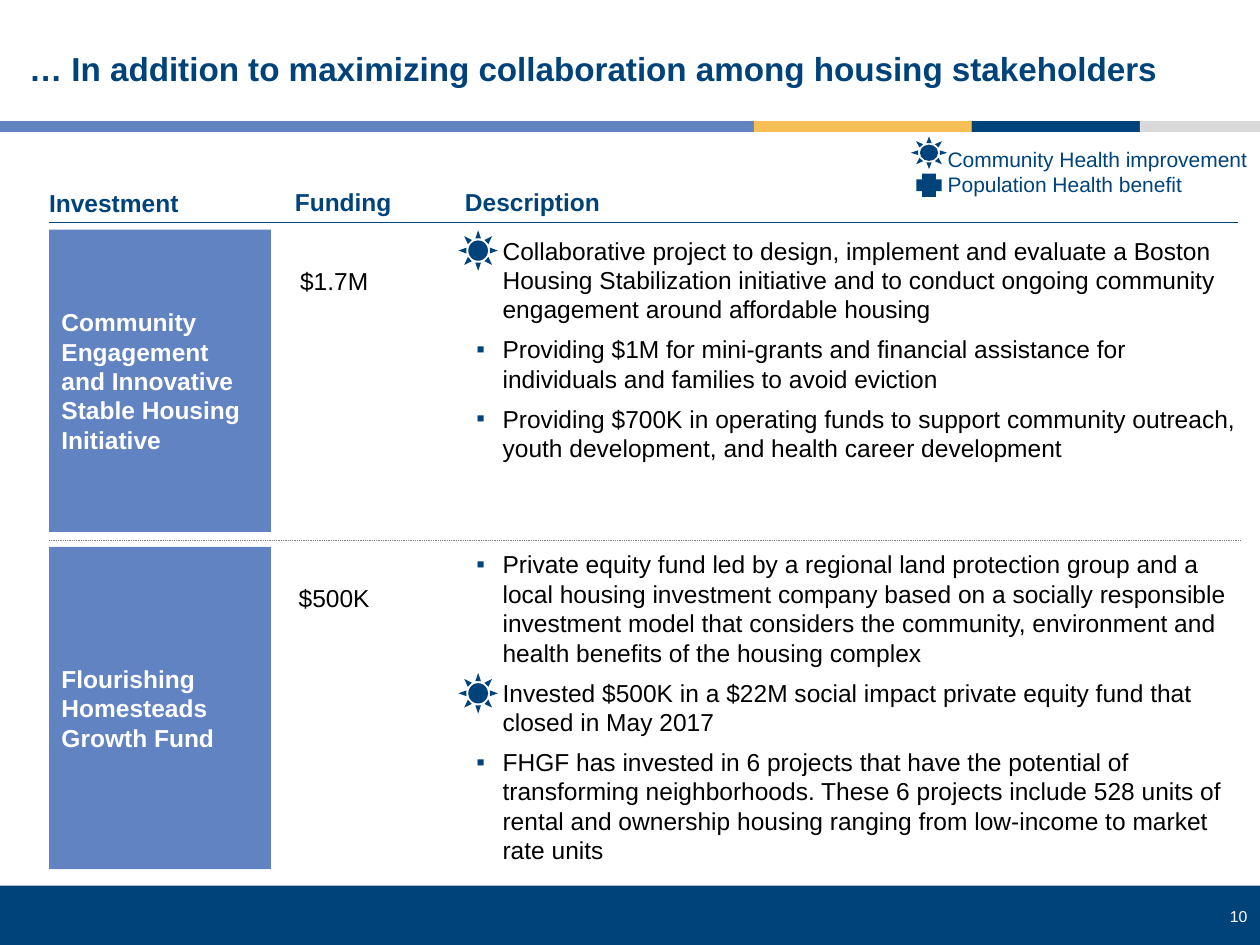
from lxml import etree
from pptx import Presentation
from pptx.dml.color import RGBColor
from pptx.enum.dml import MSO_LINE
from pptx.enum.shapes import MSO_CONNECTOR, MSO_SHAPE
from pptx.enum.text import MSO_ANCHOR, MSO_AUTO_SIZE, PP_ALIGN
from pptx.oxml.ns import qn
from pptx.util import Pt

RECT, SUN, PLUS = MSO_SHAPE.RECTANGLE, MSO_SHAPE.SUN, MSO_SHAPE.CROSS
STRAIGHT, DOTTED = MSO_CONNECTOR.STRAIGHT, MSO_LINE.ROUND_DOT
LEFT, CENTER, RIGHT = PP_ALIGN.LEFT, PP_ALIGN.CENTER, PP_ALIGN.RIGHT
TOP, MIDDLE = MSO_ANCHOR.TOP, MSO_ANCHOR.MIDDLE
FIXED = MSO_AUTO_SIZE.NONE
NAVY, BLUE, GOLD, SILVER = "00437B", "6283C2", "F8BF56", "D9D9D9"
GRAY, BLACK, WHITE = "808080", "000000", "FFFFFF"


def color(value):
    return RGBColor.from_string(value)


def write(holder, lines, size, ink, bold=False, align=LEFT, anchor=TOP, inset=(0, 0)):
    frame = holder.text_frame
    frame.word_wrap, frame.auto_size, frame.vertical_anchor = True, FIXED, anchor
    frame.margin_left = frame.margin_right = Pt(inset[0])
    frame.margin_top = frame.margin_bottom = Pt(inset[1])
    for index, line in enumerate(lines):
        paragraph = frame.add_paragraph() if index else frame.paragraphs[0]
        paragraph.alignment = align
        paragraph.space_before = Pt(0)
        run = paragraph.add_run()
        run.text = line
        run.font.name, run.font.size, run.font.bold = "Arial", Pt(size), bold
        run.font.color.rgb = color(ink)
    return frame.paragraphs


deck = Presentation()
deck.slide_width, deck.slide_height = Pt(720), Pt(540)
slide = deck.slides.add_slide(deck.slide_layouts[3])
shapes = slide.shapes
title, *descriptions = slide.placeholders

bands = [
    (RECT, 0, 506, 720, 34, NAVY),
    (RECT, 0, 69.2, 430.8, 6.2, BLUE),
    (RECT, 430.8, 69.2, 124.4, 6.2, GOLD),
    (RECT, 555.2, 69.2, 96.2, 6.2, NAVY),
    (RECT, 651.4, 69.2, 68.6, 6.2, SILVER),
]
icons = [
    (SUN, 262, 131.6, 22.5, 23.2, NAVY),
    (SUN, 262, 384.6, 22.5, 23.2, NAVY),
    (SUN, 520.5, 78, 20.8, 18.6, NAVY),
    (PLUS, 523.7, 99.3, 14.4, 13.2, NAVY),
]
investments = [
    (RECT, 28, 131.2, 126.8, 172.8, BLUE),
    (RECT, 28, 312.5, 126.8, 184.2, BLUE),
]
names = [
    "Community Engagement and Innovative Stable Housing Initiative",
    "Flourishing Homesteads Growth Fund",
]
blocks = []
for kind, left, top, width, height, fill in bands + icons + investments:
    block = shapes.add_shape(kind, Pt(left), Pt(top), Pt(width), Pt(height))
    block.shadow.inherit = False
    block.fill.solid()
    block.fill.fore_color.rgb = color(fill)
    block.line.fill.background()
    blocks.append(block)
for block, name in zip(blocks[-2:], names):
    write(block, [name], 14, WHITE, True, anchor=MIDDLE, inset=(7.2, 3.6))

title.left, title.top, title.width, title.height = Pt(9.4), Pt(15.8), Pt(697.7), Pt(49.7)
heading = write(
    title, ["… In addition to maximizing collaboration among housing stakeholders"],
    19, NAVY, True, anchor=MIDDLE, inset=(7.2, 3.6),
)
heading[0].line_spacing = 0.9

labels = [
    (28, 107.3, 120, 17.3, ["Investment"], 14, NAVY, True, LEFT),
    (168.5, 106.6, 92, 17.3, ["Funding"], 14, NAVY, True, LEFT),
    (265.7, 106.6, 92, 17.3, ["Description"], 14, NAVY, True, LEFT),
    (145, 151.9, 92, 17.3, ["$1.7M"], 14, BLACK, False, CENTER),
    (145, 333.4, 92, 17.3, ["$500K"], 14, BLACK, False, CENTER),
    (541.5, 83.5, 178.5, 29, ["Community Health improvement", "Population Health benefit"],
     12, NAVY, False, LEFT),
    (663, 518.4, 49.8, 11, ["10"], 9, WHITE, False, RIGHT),
]
for left, top, width, height, lines, size, ink, bold, align in labels:
    label = shapes.add_textbox(Pt(left), Pt(top), Pt(width), Pt(height))
    write(label, lines, size, ink, bold, align)

for top, right, ink, dash in [(127.3, 707.6, NAVY, None), (308.9, 709.2, GRAY, DOTTED)]:
    rule = shapes.add_connector(STRAIGHT, Pt(28), Pt(top), Pt(right), Pt(top))
    rule.line.color.rgb = color(ink)
    rule.line.width = Pt(0.5)
    rule.line.dash_style = dash
    etree.SubElement(rule.element.spPr, qn("a:effectLst"))

details = [
    (134.6, 154, 0, [
        "Collaborative project to design, implement and evaluate a Boston Housing Stabilization "
        "initiative and to conduct ongoing community engagement around affordable housing",
        "Providing $1M for mini-grants and financial assistance for individuals and families "
        "to avoid eviction",
        "Providing $700K in operating funds to support community outreach, youth development, "
        "and health career development",
    ]),
    (313.9, 181.4, 1, [
        "Private equity fund led by a regional land protection group and a local housing "
        "investment company based on a socially responsible investment model that considers "
        "the community, environment and health benefits of the housing complex",
        "Invested $500K in a $22M social impact private equity fund that closed in May 2017",
        "FHGF has invested in 6 projects that have the potential of transforming neighborhoods. "
        "These 6 projects include 528 units of rental and ownership housing ranging from "
        "low-income to market rate units",
    ]),
]
for description, (top, height, sun_row, lines) in zip(descriptions, details):
    description.left, description.top = Pt(272.2), Pt(top)
    description.width, description.height = Pt(435.6), Pt(height)
    for index, paragraph in enumerate(write(description, lines, 14, BLACK)):
        paragraph.space_before = Pt(6 if index else 0)
        properties = paragraph._p.get_or_add_pPr()
        properties.set("marL", str(Pt(15)))
        if index == sun_row:
            properties.set("indent", "0")
            etree.SubElement(properties, qn("a:buNone"))
        else:
            properties.set("indent", str(Pt(-15)))
            bullet_color = etree.SubElement(properties, qn("a:buClr"))
            etree.SubElement(bullet_color, qn("a:srgbClr"), val=NAVY)
            etree.SubElement(properties, qn("a:buFont"), typeface="Arial")
            etree.SubElement(properties, qn("a:buChar"), char="▪")

deck.save("out.pptx")
